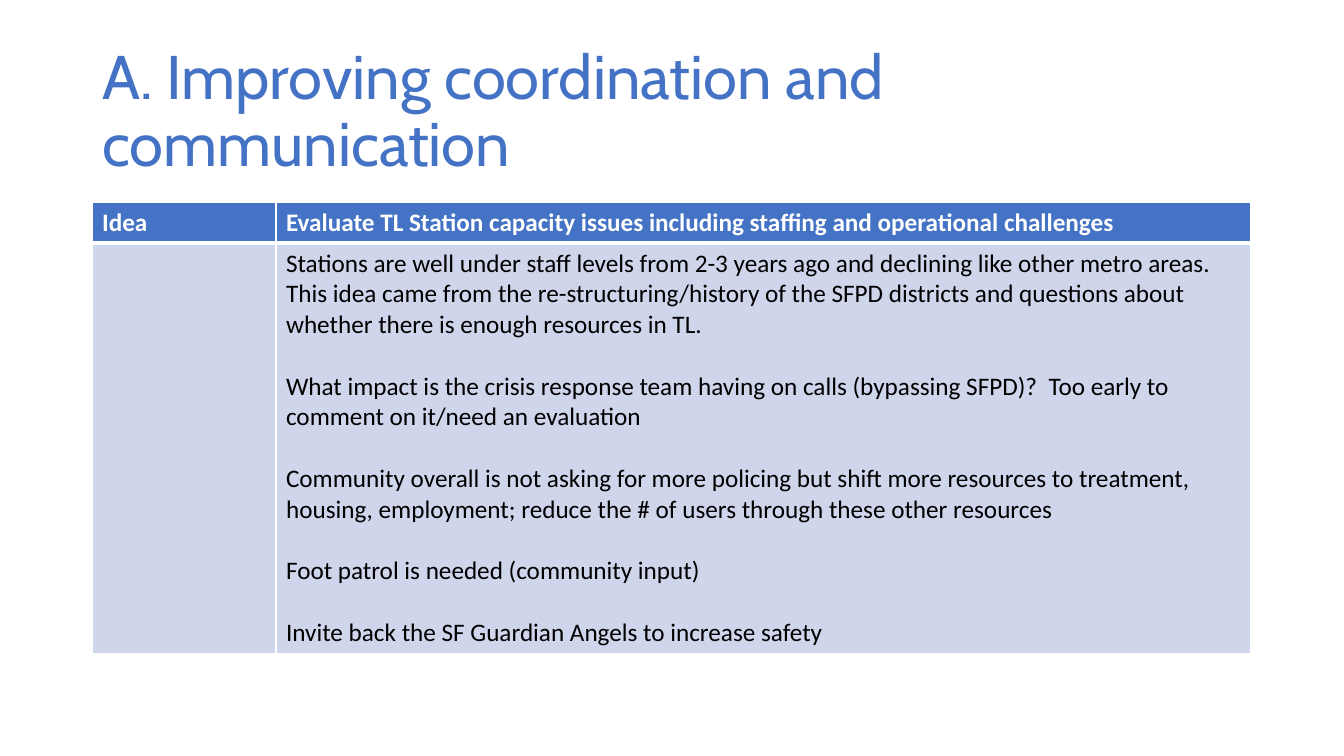
"""Build the slide on improving coordination and communication."""
from lxml import etree
from pptx import Presentation
from pptx import util as u
from pptx.dml.color import RGBColor
from pptx.enum import text
from pptx.oxml import ns

TITLE = "A. Improving coordination and communication"
HEADER = ["Idea", "Evaluate TL Station capacity issues including staffing and operational challenges"]
NOTES = [
    "Stations are well under staff levels from 2-3 years ago and declining like other metro areas. "
    "This idea came from the re-structuring/history of the SFPD districts and questions about "
    "whether there is enough resources in TL.",
    "What impact is the crisis response team having on calls (bypassing SFPD)?  "
    "Too early to comment on it/need an evaluation",
    "Community overall is not asking for more policing but shift more resources to treatment, "
    "housing, employment; reduce the # of users through these other resources",
    "Foot patrol is needed (community input)",
    "Invite back the SF Guardian Angels to increase safety",
]
ROWS = [[[label] for label in HEADER], [[], NOTES]]
BLUE, PALE, WHITE, BLACK = "4472C4", "CFD5EA", "FFFFFF", "000000"
STYLES = [(BLUE, WHITE, True, 3), (PALE, BLACK, False, 1)]
LEFT, WIDTH = 92, 1159
TITLE_TOP, TITLE_HEIGHT, TABLE_TOP = 40, 146, 202
COLUMNS, HEIGHTS = [184, 975], [41, 408]
GAP = 22


def px(n):
    return u.Emu(round(n * 914400 / 100.8))


def style_run(r, font, size, color, bold=False):
    r.font.name, r.font.size, r.font.bold = font, u.Pt(size), bold
    r.font.color.rgb = RGBColor.from_string(color)


def add_border(cell, side, points):
    tc_pr = cell._tc.get_or_add_tcPr()
    ln = etree.SubElement(tc_pr, ns.qn("a:ln" + side), w=str(u.Pt(points)))
    fill = etree.SubElement(ln, ns.qn("a:solidFill"))
    etree.SubElement(fill, ns.qn("a:srgbClr"), val=WHITE)


def fill_cell(cell, paragraphs, style):
    fill, color, bold, bottom = style
    for side, points in zip("LRTB", (1, 1, 1, bottom)):
        add_border(cell, side, points)
    cell.fill.solid()
    cell.fill.fore_color.rgb = RGBColor.from_string(fill)
    tf = cell.text_frame
    tf.text = "\n".join(paragraphs)
    for i, p in enumerate(tf.paragraphs):
        p.space_before = u.Pt(GAP if i else 0)
        for r in p.runs:
            style_run(r, "Calibri", 18, color, bold)


def add_title(s):
    sp = s.shapes.title
    sp.left, sp.top, sp.width, sp.height = map(px, (LEFT, TITLE_TOP, WIDTH, TITLE_HEIGHT))
    tf = sp.text_frame
    tf.text = TITLE
    tf.word_wrap = True
    tf.auto_size = text.MSO_AUTO_SIZE.NONE
    tf.vertical_anchor = text.MSO_ANCHOR.MIDDLE
    p = tf.paragraphs[0]
    p.alignment, p.line_spacing = text.PP_ALIGN.LEFT, 0.9
    style_run(p.runs[0], "Cabin", 44, BLUE)


def add_ideas(s):
    box = map(px, (LEFT, TABLE_TOP, WIDTH, sum(HEIGHTS)))
    table = s.shapes.add_table(len(ROWS), len(COLUMNS), *box).table
    for column, width in zip(table.columns, COLUMNS):
        column.width = px(width)
    for row, height, cells, style in zip(table.rows, HEIGHTS, ROWS, STYLES):
        row.height = px(height)
        for cell, paragraphs in zip(row.cells, cells):
            fill_cell(cell, paragraphs, style)


def main():
    prs = Presentation()
    prs.slide_width, prs.slide_height = px(1344), px(756)
    s = prs.slides.add_slide(prs.slide_layouts[5])
    add_title(s)
    add_ideas(s)
    prs.save("out.pptx")


if __name__ == "__main__":
    main()
